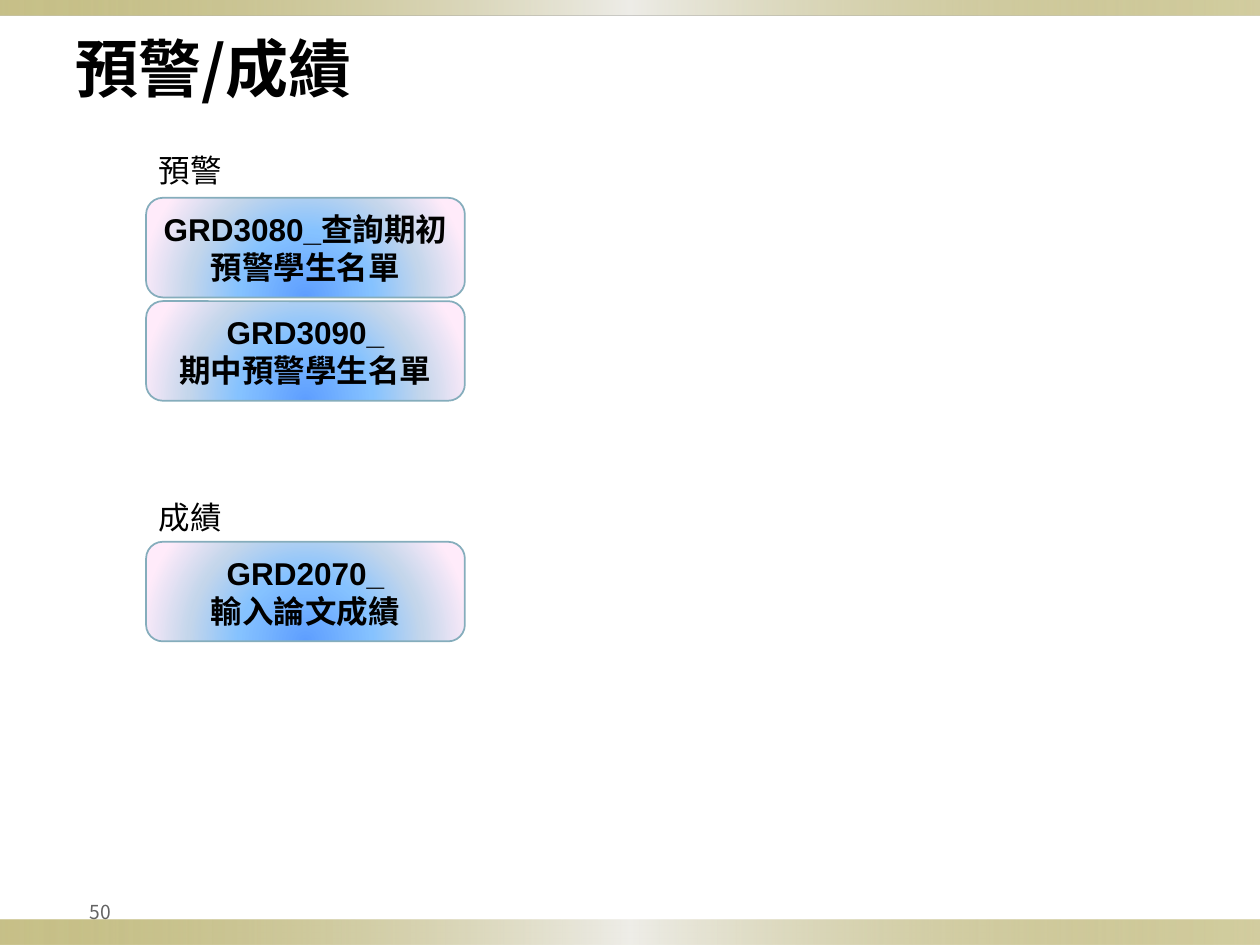
from lxml import etree
from pptx import Presentation
from pptx.dml.color import RGBColor
from pptx.enum.shapes import MSO_SHAPE as Preset
from pptx.enum.text import MSO_ANCHOR as Anchor, MSO_AUTO_SIZE as AutoSize, PP_ALIGN as Align
from pptx.oxml.ns import qn
from pptx.util import Inches, Pt

CJK_FONT = "Noto Sans CJK SC"
BAND_STOPS = [(0, "918415", 50), (50, "EEEDE8", 100), (100, "918415", 40)]
BUTTON_STOPS = [(0, "5E9EFF", 100), (40, "85C2FF", 100),
                (70, "C4D6EB", 100), (100, "FFEBFA", 100)]


def color(value):
    return RGBColor.from_string(value)


class SlideBuilder:
    black, grey, outline = "000000", "636363", "85ADBC"
    body_font = "Arial"

    def __init__(self, slide):
        self.slide = slide

    def set_text(self, shape, text, size, font=None, ink=None, bold=False,
                 align=Align.LEFT, anchor=Anchor.TOP):
        frame = shape.text_frame
        frame.text = text
        frame.vertical_anchor = anchor
        for paragraph in frame.paragraphs:
            paragraph.alignment = align
            for run in paragraph.runs:
                run.font.size, run.font.bold = Pt(size), bold
                run.font.name = font or self.body_font
                run.font.color.rgb = color(ink or self.black)
                east_asian = etree.Element(qn("a:ea"), typeface=CJK_FONT)
                run.font._element.find(qn("a:latin")).addnext(east_asian)
        return frame

    def text(self, text, left, top, width, height, size, wrap=True, **style):
        box = self.slide.shapes.add_textbox(
            Inches(left), Inches(top), Inches(width), Inches(height))
        frame = self.set_text(box, text, size, **style)
        frame.word_wrap = wrap
        return frame

    def label(self, text, left, top):
        frame = self.text(text, left, top, 0.71, 0.4, 18, wrap=False)
        frame.auto_size = AutoSize.SHAPE_TO_FIT_TEXT

    def gradient_shape(self, preset, left, top, width, height, stops, radial=False):
        shape = self.slide.shapes.add_shape(
            preset, Inches(left), Inches(top), Inches(width), Inches(height))
        shape.shadow.inherit = False
        shape.fill.background()
        gradient = etree.Element(qn("a:gradFill"), rotWithShape="1")
        stop_list = etree.SubElement(gradient, qn("a:gsLst"))
        for position, value, opacity in stops:
            stop = etree.SubElement(stop_list, qn("a:gs"), pos=str(position * 1000))
            tint = etree.SubElement(stop, qn("a:srgbClr"), val=value)
            if opacity < 100:
                etree.SubElement(tint, qn("a:alpha"), val=str(opacity * 1000))
        if radial:  # spreads from the middle of the bottom edge
            spread = etree.SubElement(gradient, qn("a:path"), path="circle")
            etree.SubElement(spread, qn("a:fillToRect"), l="50000", t="100000", r="50000")
        else:
            etree.SubElement(gradient, qn("a:lin"), ang="0", scaled="1")
        properties = shape._element.spPr
        properties.replace(properties.find(qn("a:noFill")), gradient)
        return shape

    def band(self, top, height):
        shape = self.gradient_shape(Preset.RECTANGLE, 0, top, 10, height, BAND_STOPS)
        shape.line.fill.background()

    def button(self, text, left, top):
        shape = self.gradient_shape(
            Preset.ROUNDED_RECTANGLE, left, top, 2.53, 0.79, BUTTON_STOPS, radial=True)
        shape.line.color.rgb = color(self.outline)
        shape.line.width = Pt(1)
        frame = self.set_text(shape, text, 18, bold=True, align=Align.CENTER,
                              anchor=Anchor.MIDDLE)
        frame.word_wrap = True


def main():
    presentation = Presentation()
    presentation.slide_width, presentation.slide_height = Inches(10), Inches(7.5)
    builder = SlideBuilder(presentation.slides.add_slide(presentation.slide_layouts[6]))

    # Bands at the bottom and top edges
    builder.band(7.3, 0.2)
    builder.band(0, 0.12)

    # Page number and title
    number = builder.text("50", 0, 7.04, 0.93, 0.4, 11, font=CJK_FONT,
                          ink=builder.grey, align=Align.RIGHT, anchor=Anchor.MIDDLE)
    number.margin_left = number.margin_right = Inches(0.05)
    builder.text("預警/成績", 0.5, 0.05, 9, 0.97, 36, font=CJK_FONT, bold=True,
                 anchor=Anchor.MIDDLE)

    # Each section: a label with its buttons stacked below
    left, pitch = 1.16, 0.82
    sections = [
        ("預警", 1.15, 1.57, ["GRD3080_查詢期初預警學生名單", "GRD3090_\n期中預警學生名單"]),
        ("成績", 3.9, 4.3, ["GRD2070_\n輸入論文成績"]),
    ]
    for heading, label_top, first_top, buttons in sections:
        builder.label(heading, left, label_top)
        for index, caption in enumerate(buttons):
            builder.button(caption, left, first_top + index * pitch)

    presentation.save("out.pptx")


if __name__ == "__main__":
    main()
